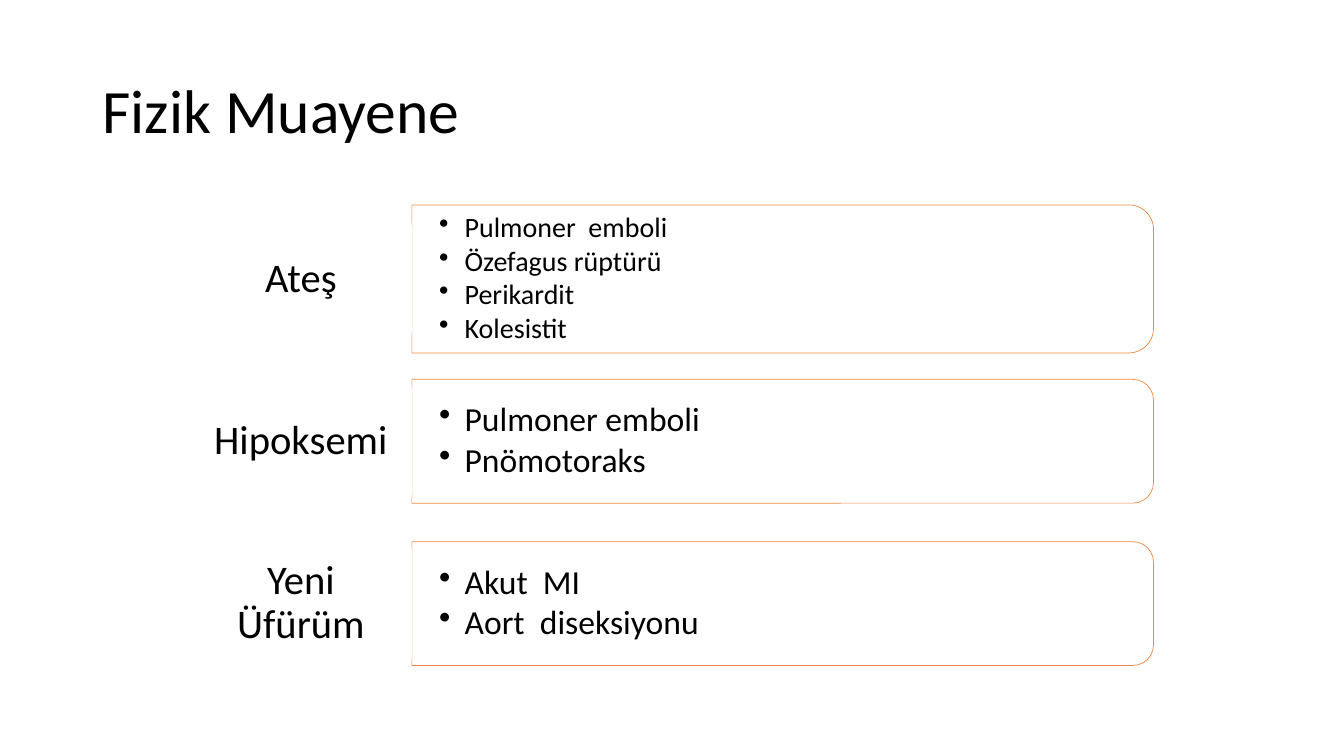
from lxml import etree
from pptx import Presentation
from pptx.dml.color import RGBColor
from pptx.enum.shapes import MSO_SHAPE
from pptx.enum.text import MSO_ANCHOR, PP_ALIGN
from pptx.oxml.ns import qn
from pptx.util import Cm, Pt

PANEL = MSO_SHAPE.ROUND_2_SAME_RECTANGLE
ROUND = MSO_SHAPE.ROUNDED_RECTANGLE
MIDDLE = MSO_ANCHOR.MIDDLE
LEFT, CENTER = PP_ALIGN.LEFT, PP_ALIGN.CENTER


def paint(part, color):
    """Give a fill or line format a solid colour."""
    fill = getattr(part, "fill", part)
    fill.solid()
    fill.fore_color.rgb = RGBColor.from_string(color)


def write(shape, lines, size, align, pad):
    """Fill a shape with paragraphs of one style; pad is (side, top) in cm."""
    frame = shape.text_frame
    frame.word_wrap = True
    frame.vertical_anchor = MIDDLE
    frame.margin_left = frame.margin_right = Cm(pad[0])
    frame.margin_top = frame.margin_bottom = Cm(pad[1])
    for i, line in enumerate(lines):
        para = frame.add_paragraph() if i else frame.paragraphs[0]
        para.text = line
        para.alignment = align
        para.line_spacing = 0.9
        para.font.size = Pt(size)
        para.font.name = "Calibri"
        para.font.color.rgb = RGBColor.from_string("000000")


deck = Presentation()
deck.slide_width, deck.slide_height = Cm(33.87), Cm(19.05)
slide = deck.slides.add_slide(deck.slide_layouts[6])
shapes = slide.shapes

# Title
title = shapes.add_textbox(Cm(2.33), Cm(1.01), Cm(29.21), Cm(3.68))
write(title, ["Fizik Muayene"], 44, LEFT, (0.25, 0.13))

# Rows: label, list, list size, panel height, list height
rows = [
    ("Ateş", ["Pulmoner  emboli", "Özefagus rüptürü", "Perikardit", "Kolesistit"],
     20, 3.73, 3.38),
    ("Hipoksemi", ["Pulmoner emboli", "Pnömotoraks"], 24, 3.12, 2.82),
    ("Yeni Üfürüm", ["Akut  MI", "Aort  diseksiyonu"], 24, 3.12, 2.82),
]
EDGE, LONG = 10.38, 18.69
TAG_W, TAG_H = 5.59, 3.89

for i, (name, items, size, high, inner) in enumerate(rows):
    mid = 7.03 + 4.09 * i

    # Outlined panel, turned so its round corners face right
    panel = shapes.add_shape(PANEL, Cm(EDGE + (LONG - high) / 2),
                             Cm(mid - LONG / 2), Cm(high), Cm(LONG))
    panel.rotation = 90
    panel.shadow.inherit = False
    paint(panel.fill, "FFFFFF")
    paint(panel.line, "ED7D31")
    panel.line.width = Pt(0.5)
    for color in panel.element.spPr.iter(qn("a:srgbClr")):
        etree.SubElement(color, qn("a:alpha"), val="90000")

    # Bulleted list
    box = shapes.add_textbox(Cm(EDGE), Cm(mid - inner / 2), Cm(18.53), Cm(inner))
    write(box, items, size, LEFT, (0.69, 0.36))
    for para in box.text_frame.paragraphs:
        para.space_after = Pt(size * 0.13)
        props = para._p.get_or_add_pPr()
        props.set("marL", str(Cm(0.64)))
        props.set("indent", str(-Cm(0.64)))
        etree.SubElement(props, qn("a:buChar"), char="•")
        props.append(props.find(qn("a:defRPr")))

    # Label
    tag = shapes.add_shape(ROUND, Cm(EDGE - TAG_W), Cm(mid - TAG_H / 2),
                           Cm(TAG_W), Cm(TAG_H))
    tag.shadow.inherit = False
    paint(tag.fill, "FFFFFF")
    tag.line.fill.background()
    write(tag, [name], 29, CENTER, (0.3, 0.15))

deck.save("out.pptx")
